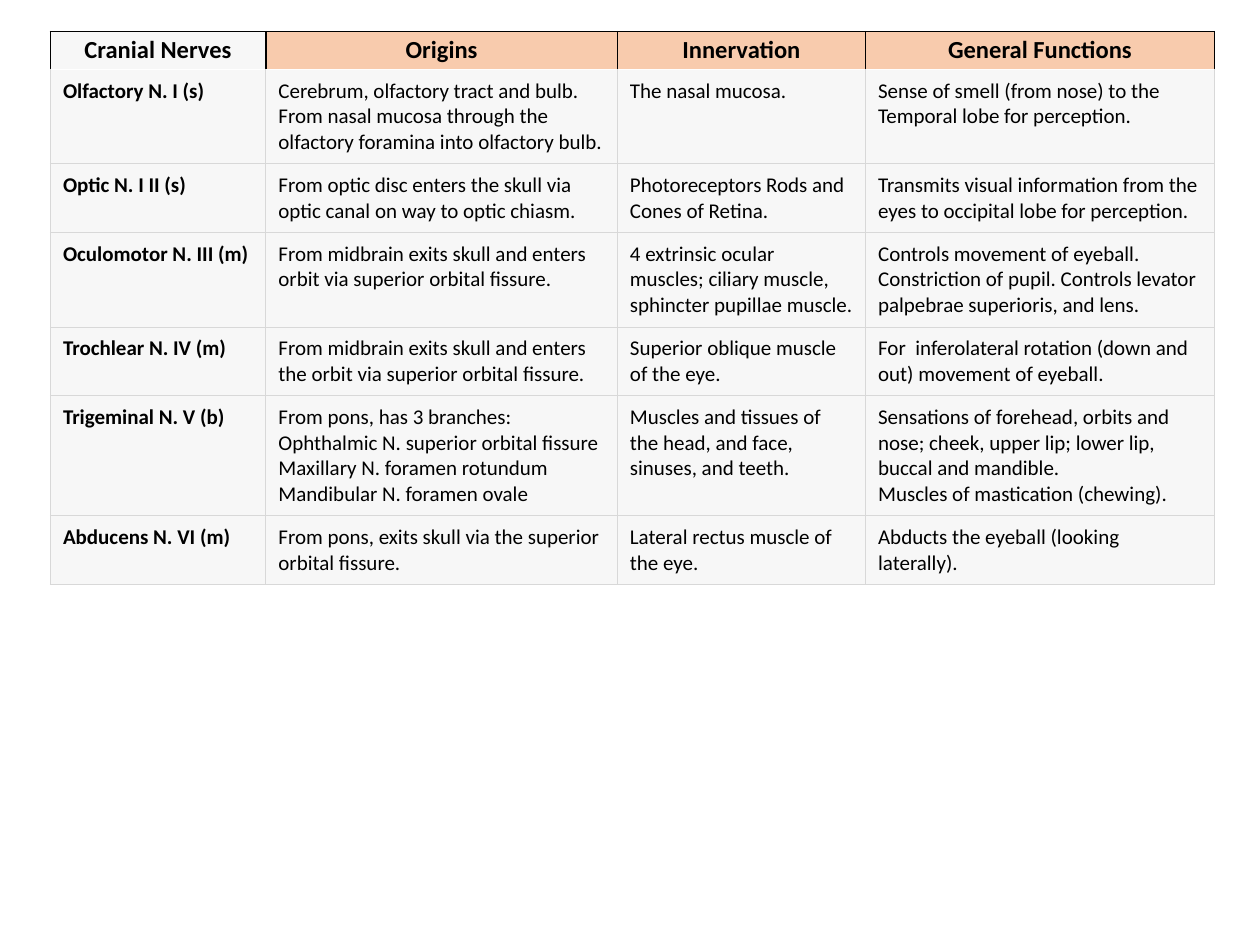
from lxml import etree
from pptx import Presentation
from pptx.dml.color import RGBColor
from pptx.enum import text as te
from pptx.oxml import ns
from pptx.util import Inches, Pt

BLACK = RGBColor(0x00, 0x00, 0x00)
GRAY = RGBColor(0xD8, 0xD8, 0xD8)
PALE = RGBColor(0xF7, 0xF7, 0xF7)
PEACH = RGBColor(0xF8, 0xCB, 0xAD)

COLS = [1.71, 2.79, 1.97, 2.77]
ROWS = [0.3, 0.75, 0.54, 0.75, 0.54, 0.94, 0.54]
HEADS = ["Cranial Nerves", "Origins", "Innervation", "General Functions"]
NERVES = [
    ["Olfactory N. I (s)",
     "Cerebrum, olfactory tract and bulb. From nasal mucosa through the "
     "olfactory foramina into olfactory bulb.",
     "The nasal mucosa.",
     "Sense of smell (from nose) to the Temporal lobe for perception."],
    ["Optic N. I II (s)",
     "From optic disc enters the skull via optic canal on way to optic chiasm.",
     "Photoreceptors Rods and Cones of Retina.",
     "Transmits visual information from the eyes to occipital lobe for perception."],
    ["Oculomotor N. III (m)",
     "From midbrain exits skull and enters orbit via superior orbital fissure.",
     "4 extrinsic ocular muscles; ciliary muscle, sphincter pupillae muscle.",
     "Controls movement of eyeball.\n"
     "Constriction of pupil. Controls levator palpebrae superioris, and lens."],
    ["Trochlear N. IV (m)",
     "From midbrain exits skull and enters the orbit via superior orbital fissure.",
     "Superior oblique muscle of the eye.",
     "For  inferolateral rotation (down and out) movement of eyeball."],
    ["Trigeminal N. V (b)",
     "From pons, has 3 branches: Ophthalmic N. superior orbital fissure\n"
     "Maxillary N. foramen rotundum Mandibular N. foramen ovale",
     "Muscles and tissues of the head, and face, sinuses, and teeth.",
     "Sensations of forehead, orbits and nose; cheek, upper lip; lower lip, "
     "buccal and mandible.\nMuscles of mastication (chewing)."],
    ["Abducens N. VI (m)",
     "From pons, exits skull via the superior orbital fissure.",
     "Lateral rectus muscle of the eye.",
     "Abducts the eyeball (looking laterally)."],
]


def write(frame, words, size=12, bold=False, align=te.PP_ALIGN.LEFT):
    """Fill a cell or frame, one paragraph per line of words."""
    frame.text = words
    for para in frame.paragraphs:
        para.alignment = align
        for run in para.runs:
            font = run.font
            font.name, font.size, font.bold = "Calibri", Pt(size), bold
            font.color.rgb = BLACK


def edge(cell, sides, color, width):
    """Draw borders; sides must follow the order L, R, T, B."""
    props = cell._tc.get_or_add_tcPr()
    for i, side in enumerate(sides):
        line = etree.Element(ns.qn("a:ln" + side), w=str(Pt(width)))
        fill = etree.SubElement(line, ns.qn("a:solidFill"))
        etree.SubElement(fill, ns.qn("a:srgbClr"), val=str(color))
        props.insert(i, line)


def style(cell, fill, pad_x, pad_y):
    cell.fill.solid()
    cell.fill.fore_color.rgb = fill
    cell.margin_left = cell.margin_right = Inches(pad_x)
    cell.margin_top = cell.margin_bottom = Inches(pad_y)


def add_grid(slide, left, top, width, height):
    frame = slide.shapes.add_table(
        len(ROWS), len(COLS), Inches(left), Inches(top), Inches(width), Inches(height))
    grid = frame.table
    grid.horz_banding = False
    for col, size in zip(grid.columns, COLS):
        col.width = Inches(size)
    for row, size in zip(grid.rows, ROWS):
        row.height = Inches(size)

    # Header row
    for c, head in enumerate(HEADS):
        cell = grid.cell(0, c)
        write(cell.text_frame, head, size=14, bold=True, align=te.PP_ALIGN.CENTER)
        style(cell, PEACH if c else PALE, 0.06, 0.03)
        cell.vertical_anchor = te.MSO_ANCHOR.MIDDLE
        edge(cell, "LRTB", BLACK, 1)

    # Nerve rows: the first shares its top edge with the header
    for r, nerve in enumerate(NERVES, 1):
        for c, words in enumerate(nerve):
            cell = grid.cell(r, c)
            write(cell.text_frame, words, bold=c == 0)
            style(cell, PALE, 0.1, 0.07)
            edge(cell, "LRB" if r == 1 else "LRTB", GRAY, 0.75)


def main():
    deck = Presentation()
    deck.slide_width, deck.slide_height = Inches(10), Inches(7.5)
    slide = deck.slides.add_slide(deck.slide_layouts[6])
    add_grid(slide, 0.4, 0.25, sum(COLS), sum(ROWS))
    deck.save("out.pptx")


if __name__ == "__main__":
    main()
